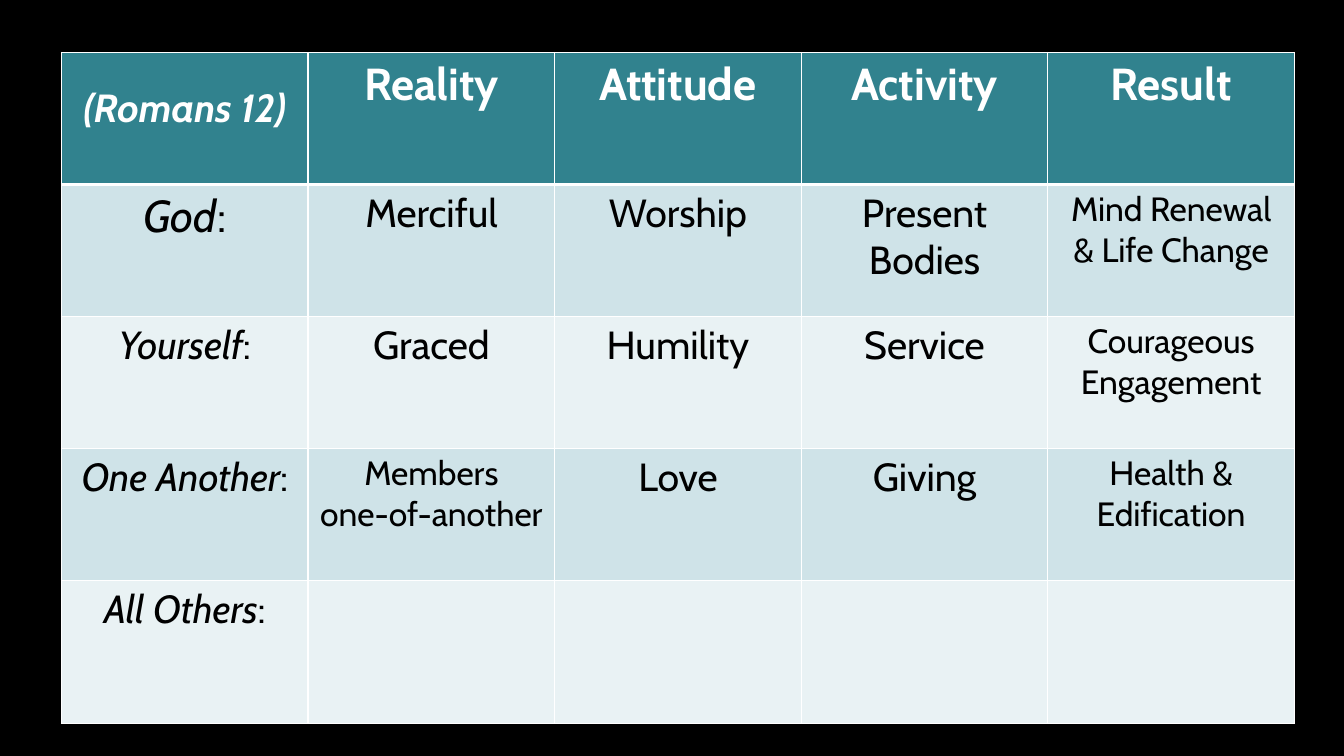
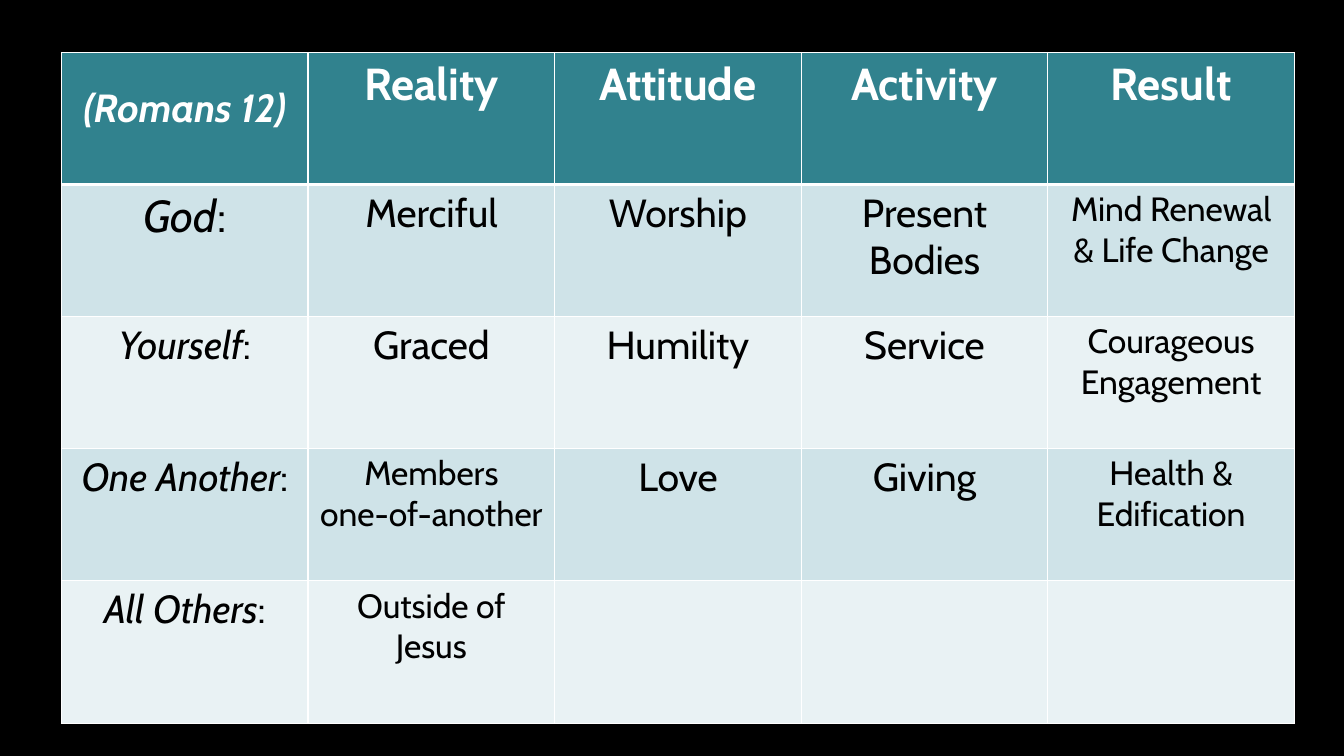
"""Build two slides that fill in a Romans 12 table step by step."""
from pptx import Presentation
from pptx.dml.color import RGBColor
from pptx.enum.text import PP_ALIGN
from pptx.oxml import parse_xml
from pptx.oxml.ns import nsdecls
from pptx.util import Inches, Pt

BLACK = RGBColor(0x00, 0x00, 0x00)
WHITE = RGBColor(0xFF, 0xFF, 0xFF)
TEAL = RGBColor(0x31, 0x82, 0x8E)
BANDS = (RGBColor(0xCF, 0xE3, 0xE8), RGBColor(0xE9, 0xF2, 0xF4))
FONT = "Cabin"
LARGE, MEDIUM, SMALL = 32, 28, 24

HEADINGS = [("(Romans 12)", MEDIUM), ("Reality", LARGE), ("Attitude", LARGE),
            ("Activity", LARGE), ("Result", LARGE)]
RELATIONSHIPS = [
    [("God:", LARGE), ("Merciful", MEDIUM), ("Worship", MEDIUM),
     ("Present Bodies", MEDIUM), ("Mind Renewal & Life Change", SMALL)],
    [("Yourself:", MEDIUM), ("Graced", MEDIUM), ("Humility", MEDIUM),
     ("Service", MEDIUM), ("Courageous Engagement", SMALL)],
    [("One Another:", MEDIUM), ("Members\none-of-another", SMALL), ("Love", MEDIUM),
     ("Giving", MEDIUM), ("Health & Edification", SMALL)],
]
OTHERS = ("All Others:", MEDIUM)
LAST_ROWS = [[OTHERS], [OTHERS, ("Outside of Jesus", SMALL)]]

LEFT, TOP = Inches(0.61), Inches(0.52)
WIDTH, HEIGHT = Inches(12.23), Inches(6.67)
ROW_HEIGHTS = [Inches(1.31)] * 4 + [Inches(1.42)]
REFERENCE_MARGIN = Inches(0.32)


def add_borders(cell, row_index):
    """Draw white cell borders, heavier between the header and the body."""
    weights = {"L": 1, "R": 1, "T": 3 if row_index == 1 else 1,
               "B": 3 if row_index == 0 else 1}
    for side, weight in weights.items():
        cell._tc.get_or_add_tcPr().append(parse_xml(
            f'<a:ln{side} {nsdecls("a")} w="{Pt(weight)}"><a:solidFill>'
            f'<a:srgbClr val="{WHITE}"/></a:solidFill></a:ln{side}>'))


def write_text(cell, text, size, is_header, is_label):
    """Write centred text; labels are italic up to their colon."""
    cell.text_frame.text = text
    for paragraph in cell.text_frame.paragraphs:
        paragraph.alignment = PP_ALIGN.CENTER
        if text.endswith(":"):
            paragraph.runs[0].text = text[:-1]
            paragraph.add_run().text = ":"
        for span in paragraph.runs:
            span.font.name = FONT
            span.font.size = Pt(size)
            span.font.bold = is_header
            span.font.italic = is_label and span.text != ":"
            span.font.color.rgb = WHITE if is_header else BLACK


def add_table_slide(deck, last_row):
    """Add a black slide with the table, ending in the given row."""
    page = deck.slides.add_slide(deck.slide_layouts[6])
    page.background.fill.solid()
    page.background.fill.fore_color.rgb = BLACK
    rows = [HEADINGS, *RELATIONSHIPS, last_row]
    table = page.shapes.add_table(
        len(rows), len(HEADINGS), LEFT, TOP, WIDTH, HEIGHT).table
    for row, height in zip(table.rows, ROW_HEIGHTS):
        row.height = height
    for row_index, entries in enumerate(rows):
        is_header = row_index == 0
        for cell in table.rows[row_index].cells:
            add_borders(cell, row_index)
            cell.fill.solid()
            cell.fill.fore_color.rgb = TEAL if is_header else BANDS[(row_index - 1) % 2]
        for column_index, (text, size) in enumerate(entries):
            write_text(table.cell(row_index, column_index), text, size,
                       is_header, column_index == 0)
    table.cell(0, 0).margin_top = REFERENCE_MARGIN


def main():
    """Build and save the deck."""
    deck = Presentation()
    deck.slide_width, deck.slide_height = Inches(13.33), Inches(7.5)
    for last_row in LAST_ROWS:
        add_table_slide(deck, last_row)
    deck.save("out.pptx")


if __name__ == "__main__":
    main()
